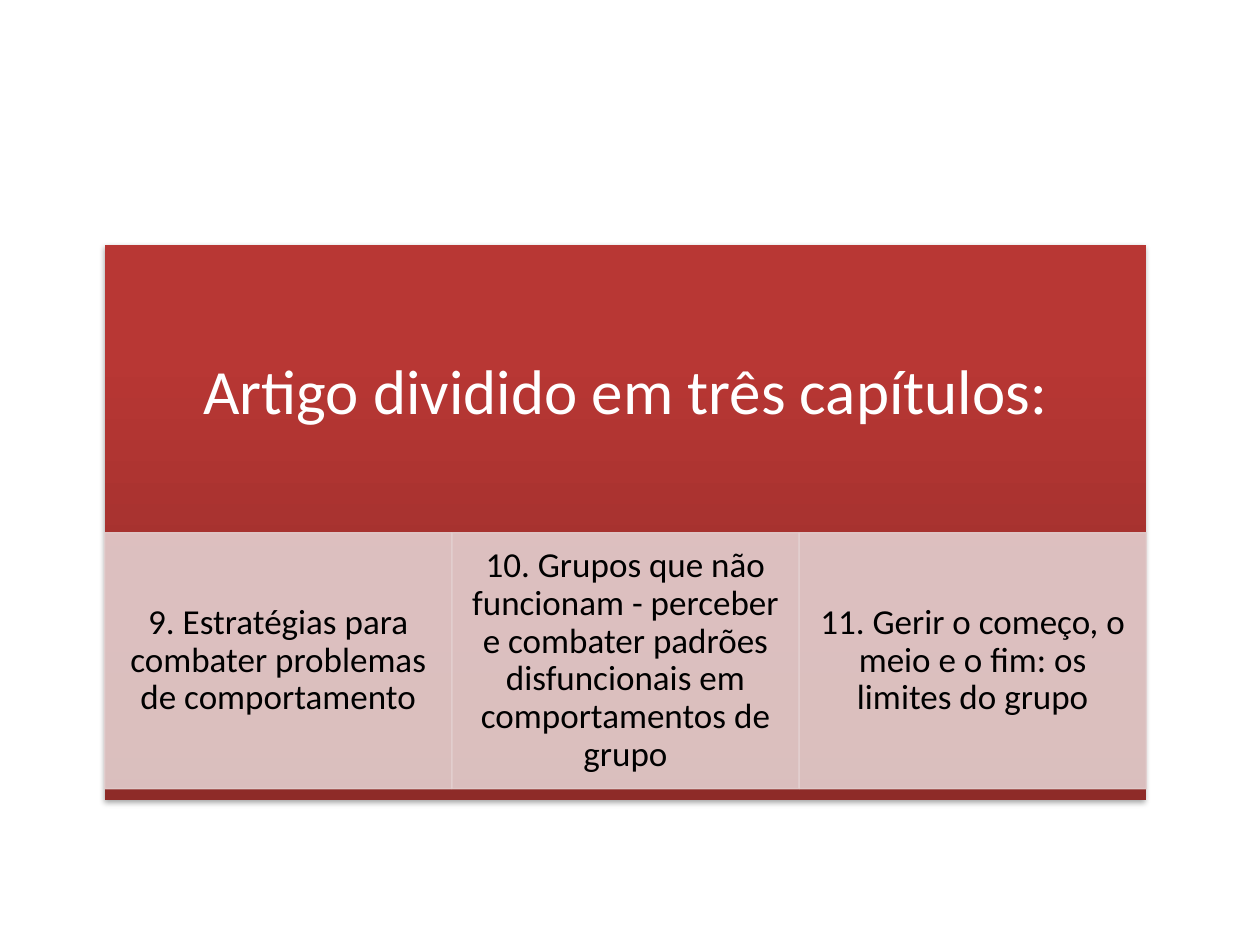
from lxml.etree import SubElement
from pptx import Presentation
from pptx.dml.color import RGBColor
from pptx.enum.shapes import MSO_SHAPE
from pptx.enum.text import MSO_ANCHOR, PP_ALIGN
from pptx.oxml import parse_xml
from pptx.oxml.ns import nsdecls, qn
from pptx.util import Cm, Pt

LEFT, TOP, WIDTH, HEIGHT = 2.11, 4.93, 21, 11.2
TITLE_HEIGHT = 6.05
CELL_TOP, CELL_HEIGHT = 10.74, 5.16
TITLE = "Artigo dividido em três capítulos:"
CHAPTERS = [
    "9. Estratégias para combater problemas de comportamento",
    "10. Grupos que não funcionam - perceber e combater padrões "
    "disfuncionais em comportamentos de grupo",
    "11. Gerir o começo, o meio e o fim: os limites do grupo",
]


def rgb(value):
    return RGBColor.from_string(value)


def write(sp, text, size=20, color="000000", font="Calibri", margins=(0.4, 0.07)):
    tf = sp.text_frame
    tf.word_wrap = True
    tf.vertical_anchor = MSO_ANCHOR.MIDDLE
    tf.margin_left = tf.margin_right = Cm(margins[0])
    tf.margin_top = tf.margin_bottom = Cm(margins[1])
    p = tf.paragraphs[0]
    p.alignment = PP_ALIGN.CENTER
    p.line_spacing = 0.9
    r = p.add_run()
    r.text = text
    r.font.name = font
    r.font.size = Pt(size)
    r.font.color.rgb = rgb(color)


class ChapterSlide:
    gradient = [(0, "8E2B28"), (80, "B83734"), (100, "BB3531")]
    cell_color = "E3CFCF"
    opacity = 90

    def __init__(self, prs):
        self.s = prs.slides.add_slide(prs.slide_layouts[6])

    def rectangle(self, x, y, w, h):
        sp = self.s.shapes.add_shape(MSO_SHAPE.RECTANGLE, Cm(x), Cm(y), Cm(w), Cm(h))
        sp.shadow.inherit = False
        return sp

    def panel(self, x, y, w, h):
        sp = self.rectangle(x, y, w, h)
        sp.line.fill.background()
        stops = "".join(
            f'<a:gs pos="{pos * 1000}"><a:srgbClr val="{color}"/></a:gs>'
            for pos, color in self.gradient
        )
        props = sp.element.spPr
        props.find(qn("a:prstGeom")).addnext(parse_xml(
            f'<a:gradFill {nsdecls("a")} rotWithShape="1"><a:gsLst>{stops}</a:gsLst>'
            '<a:lin ang="16200000" scaled="0"/></a:gradFill>'
        ))
        props.find(qn("a:effectLst")).append(parse_xml(
            f'<a:outerShdw {nsdecls("a")} blurRad="40000" dist="23000" dir="5400000" '
            'rotWithShape="0"><a:srgbClr val="000000"><a:alpha val="35000"/>'
            '</a:srgbClr></a:outerShdw>'
        ))

    def title(self, text, x, y, w, h):
        sp = self.s.shapes.add_textbox(Cm(x), Cm(y), Cm(w), Cm(h))
        write(sp, text, size=36, color="FFFFFF", margins=(0.71, 0.71))

    def cell(self, text, x, y, w, h):
        sp = self.rectangle(x, y, w, h)
        sp.fill.solid()
        sp.fill.fore_color.rgb = rgb(self.cell_color)
        sp.line.color.rgb = rgb(self.cell_color)
        sp.line.width = Pt(0.75)
        for color in sp.element.spPr.iter(qn("a:srgbClr")):
            SubElement(color, qn("a:alpha"), val=str(self.opacity * 1000))
        write(sp, text)


def main():
    prs = Presentation()
    prs.slide_width, prs.slide_height = Cm(25.4), Cm(19.05)
    slide = ChapterSlide(prs)
    slide.panel(LEFT, TOP, WIDTH, HEIGHT)
    slide.title(TITLE, LEFT, TOP, WIDTH, TITLE_HEIGHT)
    width = WIDTH / len(CHAPTERS)
    for i, chapter in enumerate(CHAPTERS):
        slide.cell(chapter, LEFT + i * width, CELL_TOP, width, CELL_HEIGHT)
    prs.save("out.pptx")


if __name__ == "__main__":
    main()
